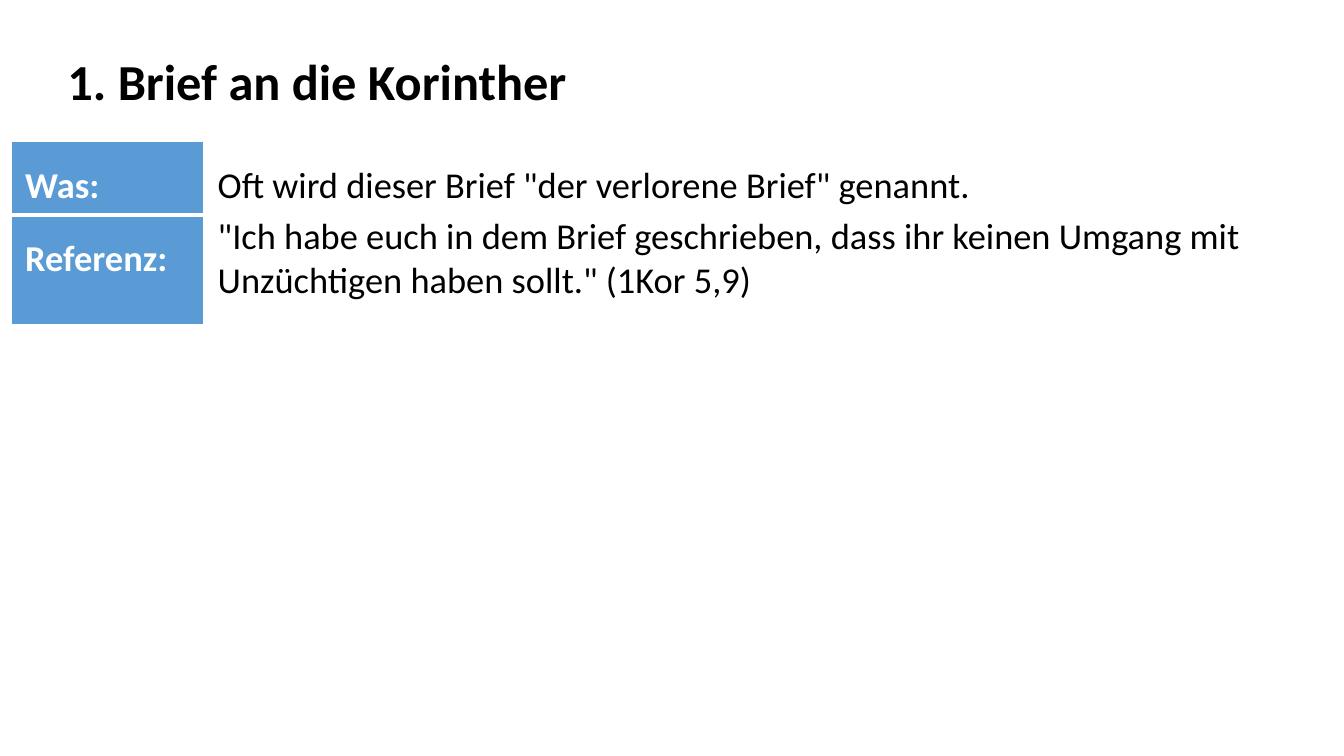
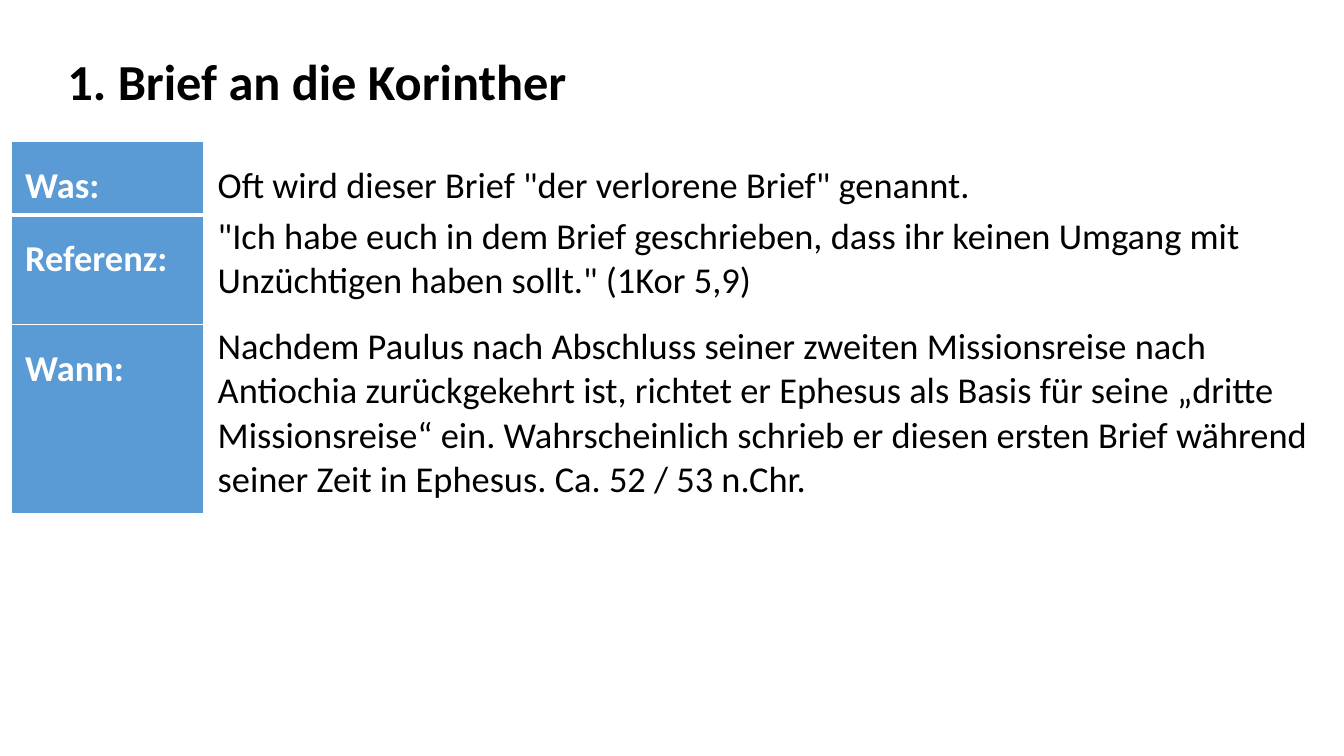
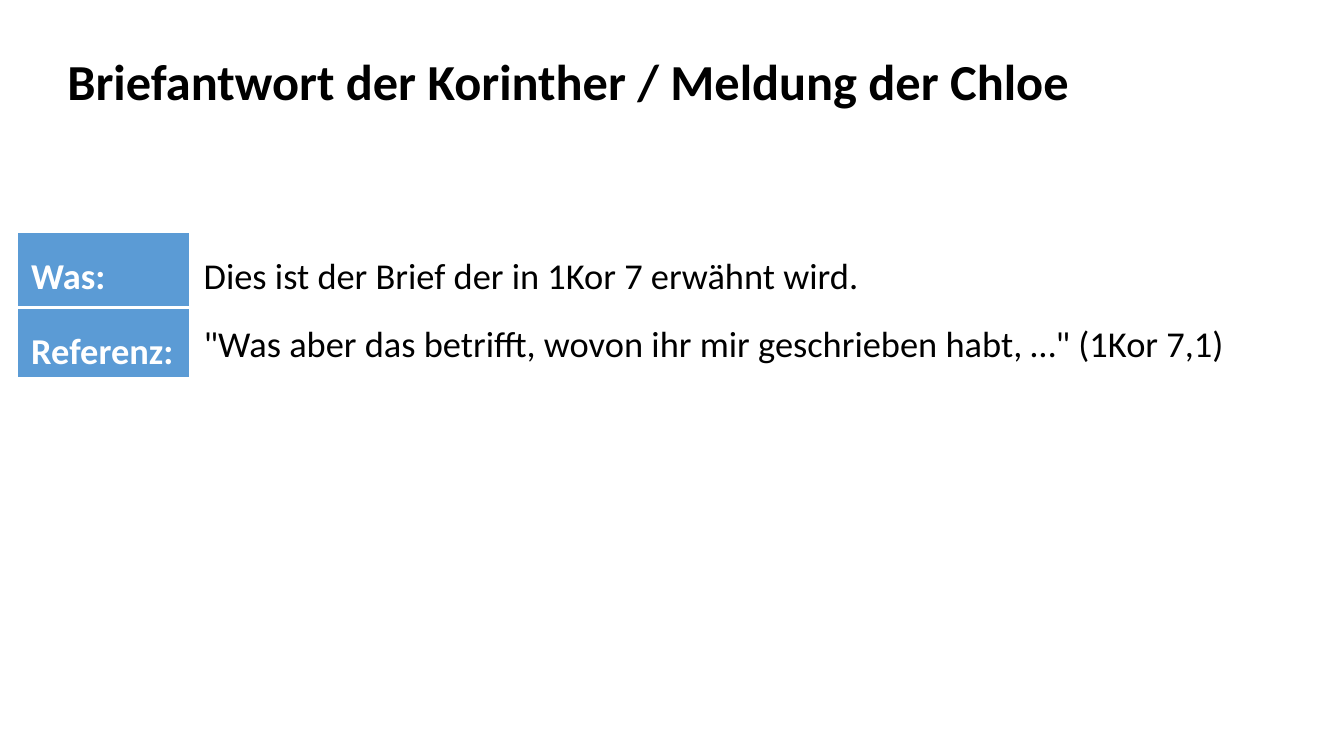
from lxml import etree
from pptx import Presentation
from pptx.dml import color
from pptx.enum import text
from pptx.oxml import ns
from pptx.util import Inches, Pt

FONT = "Calibri"
BLUE, WHITE, BLACK = "5B9BD5", "FFFFFF", "000000"
TITLE_SIZE, BODY_SIZE = 36, 26
CELL_MARGIN = 0.14
LABEL_SPACING = 1.5
HEADER_RULE, THIN_RULE = 3, 1

WAS = ("Was:", 'Oft wird dieser Brief "der verlorene Brief" genannt.', 0.73, LABEL_SPACING, 0)
REFERENZ = (
    "Referenz:",
    '"Ich habe euch in dem Brief geschrieben, dass ihr keinen Umgang mit '
    'Unzüchtigen haben sollt." (1Kor 5,9)',
    1.09, 1, 0,
)
WANN = (
    "Wann:",
    "Nachdem Paulus nach Abschluss seiner zweiten Missionsreise nach Antiochia "
    "zurückgekehrt ist, richtet er Ephesus als Basis für seine „dritte Missionsreise“ ein. "
    "Wahrscheinlich schrieb er diesen ersten Brief während seiner Zeit in Ephesus. "
    "Ca. 52 / 53 n.Chr.",
    1.88, 1, 0,
)
ANTWORT_WAS = ("Was:", "Dies ist der Brief der in 1Kor 7 erwähnt wird.", 0.74, LABEL_SPACING, 0)
ANTWORT_REFERENZ = (
    "Referenz:",
    '"Was aber das betrifft, wovon ihr mir geschrieben habt, …" (1Kor 7,1)',
    0.7, 1, 0.15,
)

BRIEF_TITLE = ("1. Brief an die Korinther", 5.21)
ANTWORT_TITLE = ("Briefantwort der Korinther / Meldung der Chloe", 10.24)
BRIEF_GRID = (0.11, 1.4, 1.91, 11.15)
ANTWORT_GRID = (0.17, 2.31, 1.71, 11.21)
SLIDES = [
    (BRIEF_TITLE, BRIEF_GRID, [WAS, REFERENZ]),
    (BRIEF_TITLE, BRIEF_GRID, [WAS, REFERENZ, WANN]),
    (ANTWORT_TITLE, ANTWORT_GRID, [ANTWORT_WAS, ANTWORT_REFERENZ]),
]


def paint(target, hex_color):
    """Give a fill a solid colour."""
    target.solid()
    target.fore_color.rgb = color.RGBColor.from_string(hex_color)


def write(frame, wording, size, hex_color, bold, spacing=1):
    """Write one run into the first paragraph of a text frame."""
    paragraph = frame.paragraphs[0]
    paragraph.line_spacing = spacing
    run = paragraph.add_run()
    run.text = wording
    run.font.name, run.font.size, run.font.bold = FONT, Pt(size), bold
    paint(run.font.fill, hex_color)


def add_title(slide, left, top, width, wording):
    """Place the slide title on one line."""
    box = slide.shapes.add_textbox(Inches(left), Inches(top), Inches(width), Inches(0.71))
    box.text_frame.word_wrap = False
    box.text_frame.auto_size = text.MSO_AUTO_SIZE.SHAPE_TO_FIT_TEXT
    write(box.text_frame, wording, TITLE_SIZE, BLACK, True)


def rule_cell(cell, bottom):
    """Draw white borders around a cell, the lower one in its own width."""
    properties = cell._tc.get_or_add_tcPr()
    for index, (side, width) in enumerate(zip("LRTB", (THIN_RULE,) * 3 + (bottom,))):
        line = etree.Element(ns.qn(f"a:ln{side}"), w=str(Pt(width)))
        solid = etree.SubElement(line, ns.qn("a:solidFill"))
        etree.SubElement(solid, ns.qn("a:srgbClr"), val=WHITE)
        properties.insert(index, line)


def fill_cell(cell, wording, fill, ink, bold, spacing, top, bottom_rule):
    """Style one cell and write its text."""
    cell.margin_left = cell.margin_right = Inches(CELL_MARGIN)
    cell.margin_top, cell.margin_bottom = Inches(top), 0
    paint(cell.fill, fill)
    rule_cell(cell, bottom_rule)
    write(cell.text_frame, wording, BODY_SIZE, ink, bold, spacing)


def add_facts(slide, left, top, label_width, fact_width, facts):
    """Place the table of labels and facts."""
    height = sum(fact[2] for fact in facts)
    table = slide.shapes.add_table(
        len(facts), 2, Inches(left), Inches(top),
        Inches(label_width + fact_width), Inches(height),
    ).table
    table.first_row = table.horz_banding = False
    for column, width in zip(table.columns, (label_width, fact_width)):
        column.width = Inches(width)
    for index, (label, fact, row_height, spacing, inset) in enumerate(facts):
        table.rows[index].height = Inches(row_height)
        rule = THIN_RULE if index else HEADER_RULE
        fill_cell(table.cell(index, 0), label, BLUE, WHITE, True, LABEL_SPACING, 0, rule)
        fill_cell(table.cell(index, 1), fact, WHITE, BLACK, False, spacing, inset, rule)


def main():
    """Build and save the presentation."""
    deck = Presentation()
    deck.slide_width, deck.slide_height = Inches(13.33), Inches(7.5)
    for (title, title_width), grid, facts in SLIDES:
        slide = deck.slides.add_slide(deck.slide_layouts[6])
        paint(slide.background.fill, WHITE)
        add_title(slide, 0.57, 0.45, title_width, title)
        add_facts(slide, *grid, facts)
    deck.save("out.pptx")


if __name__ == "__main__":
    main()
